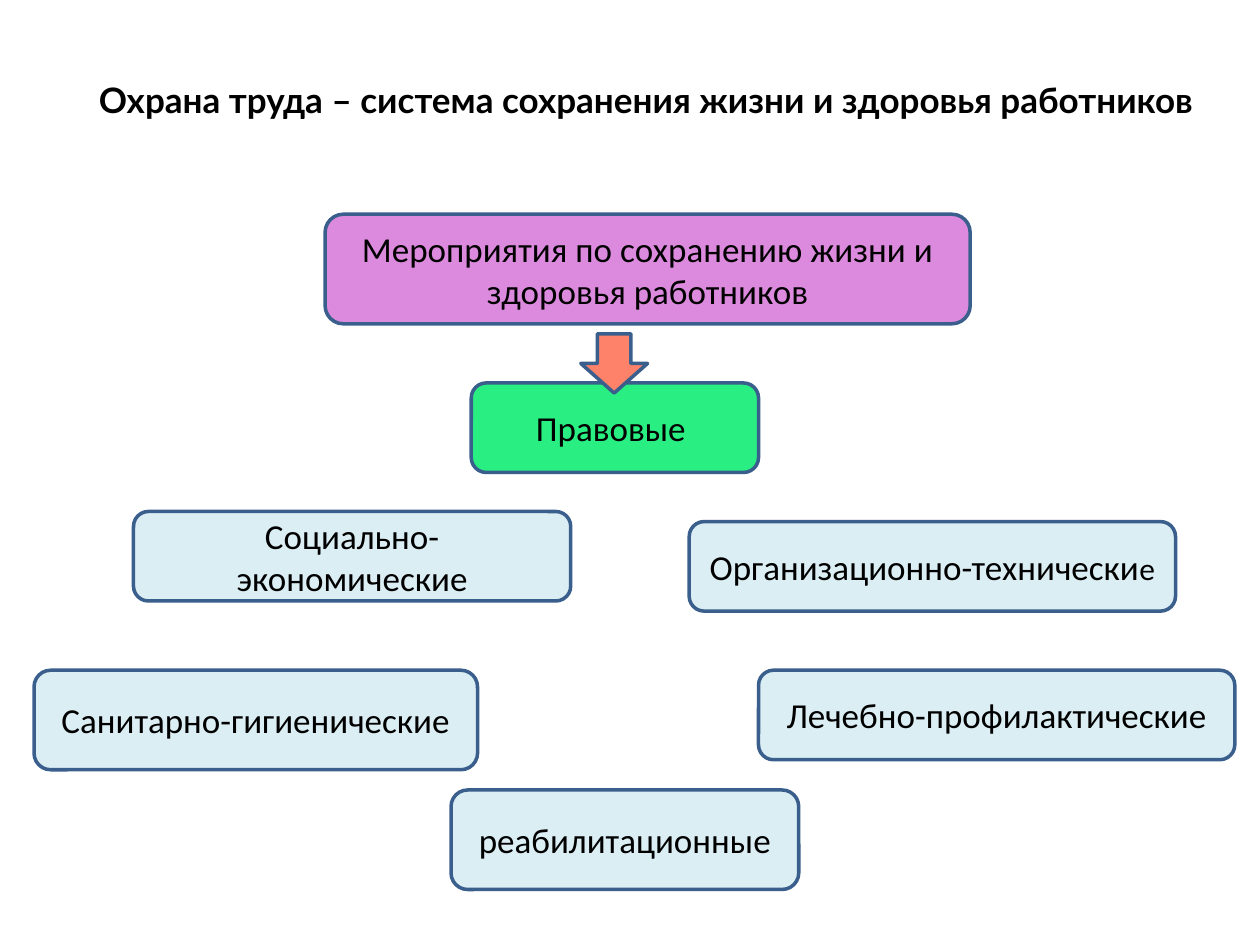
from dataclasses import dataclass

from pptx import Presentation
from pptx.dml.color import RGBColor
from pptx.enum.shapes import MSO_SHAPE
from pptx.enum.text import MSO_ANCHOR, PP_ALIGN
from pptx.util import Inches, Pt

BLACK = RGBColor(0x00, 0x00, 0x00)
OUTLINE = RGBColor(0x3A, 0x5F, 0x8C)
VIOLET = RGBColor(0xDC, 0x8A, 0xDE)
GREEN = RGBColor(0x29, 0xEF, 0x83)
PALE_BLUE = RGBColor(0xDB, 0xEE, 0xF4)
CORAL = RGBColor(0xFD, 0x82, 0x69)

SLIDE_WIDTH, SLIDE_HEIGHT = Inches(10), Inches(7.5)
LOW, TALL = 9.47, 10.53  # heights of the measure boxes


@dataclass(frozen=True)
class Area:
    """Position and size in percent of the slide's width and height."""
    left: float
    top: float
    width: float
    height: float

    def emu(self) -> tuple[int, int, int, int]:
        return (int(SLIDE_WIDTH * self.left / 100), int(SLIDE_HEIGHT * self.top / 100),
                int(SLIDE_WIDTH * self.width / 100), int(SLIDE_HEIGHT * self.height / 100))


@dataclass(frozen=True)
class Measure:
    text: str
    area: Area
    fill: RGBColor = PALE_BLUE
    small_ending: str = ""


MEASURES = [
    Measure("Мероприятия по сохранению жизни и здоровья работников",
            Area(25.8, 22.67, 51.2, 11.6), VIOLET),
    Measure("Социально-экономические", Area(10.6, 54.13, 34.7, LOW)),
    Measure("Организационно-технически", Area(54.7, 55.2, 38.6, LOW), small_ending="е"),
    Measure("Санитарно-гигиенические", Area(2.7, 70.93, 35.2, TALL)),
    Measure("Лечебно-профилактические", Area(60.2, 70.93, 37.8, LOW)),
    Measure("Правовые ", Area(37.4, 40.53, 22.8, LOW), GREEN),
    Measure("реабилитационные", Area(35.8, 83.6, 27.6, TALL)),
]


def write(holder, text: str, *, size: float = 20, font: str = "Calibri",
          bold: bool = False) -> None:
    """Append a run to the centred paragraph of a shape."""
    frame = holder.text_frame
    frame.word_wrap = True
    frame.vertical_anchor = MSO_ANCHOR.MIDDLE
    paragraph = frame.paragraphs[0]
    paragraph.alignment = PP_ALIGN.CENTER
    run = paragraph.add_run()
    run.text = text
    run.font.size = Pt(size)
    run.font.name = font
    run.font.bold = bold
    run.font.color.rgb = BLACK


def draw_shape(slide, kind: MSO_SHAPE, area: Area, fill: RGBColor):
    shape = slide.shapes.add_shape(kind, *area.emu())
    shape.shadow.inherit = False
    shape.fill.solid()
    shape.fill.fore_color.rgb = fill
    shape.line.color.rgb = OUTLINE
    shape.line.width = Pt(2)
    return shape


def draw_measure(slide, measure: Measure) -> None:
    box = draw_shape(slide, MSO_SHAPE.ROUNDED_RECTANGLE, measure.area, measure.fill)
    write(box, measure.text)
    if measure.small_ending:
        write(box, measure.small_ending, size=18)


def main() -> None:
    presentation = Presentation()
    presentation.slide_width, presentation.slide_height = SLIDE_WIDTH, SLIDE_HEIGHT
    slide = presentation.slides.add_slide(presentation.slide_layouts[6])

    # Heading
    heading = slide.shapes.add_textbox(*Area(6.7, 3.33, 89.2, 14.4).emu())
    write(heading, "Охрана труда – система сохранения жизни и здоровья работников",
          font="Lato", bold=True)

    # Groups of measures
    for measure in MEASURES:
        draw_measure(slide, measure)

    # Arrow from the main box to the legal measures
    draw_shape(slide, MSO_SHAPE.DOWN_ARROW, Area(46.1, 35.33, 5.3, 6.27), CORAL)

    presentation.save("out.pptx")


if __name__ == "__main__":
    main()
